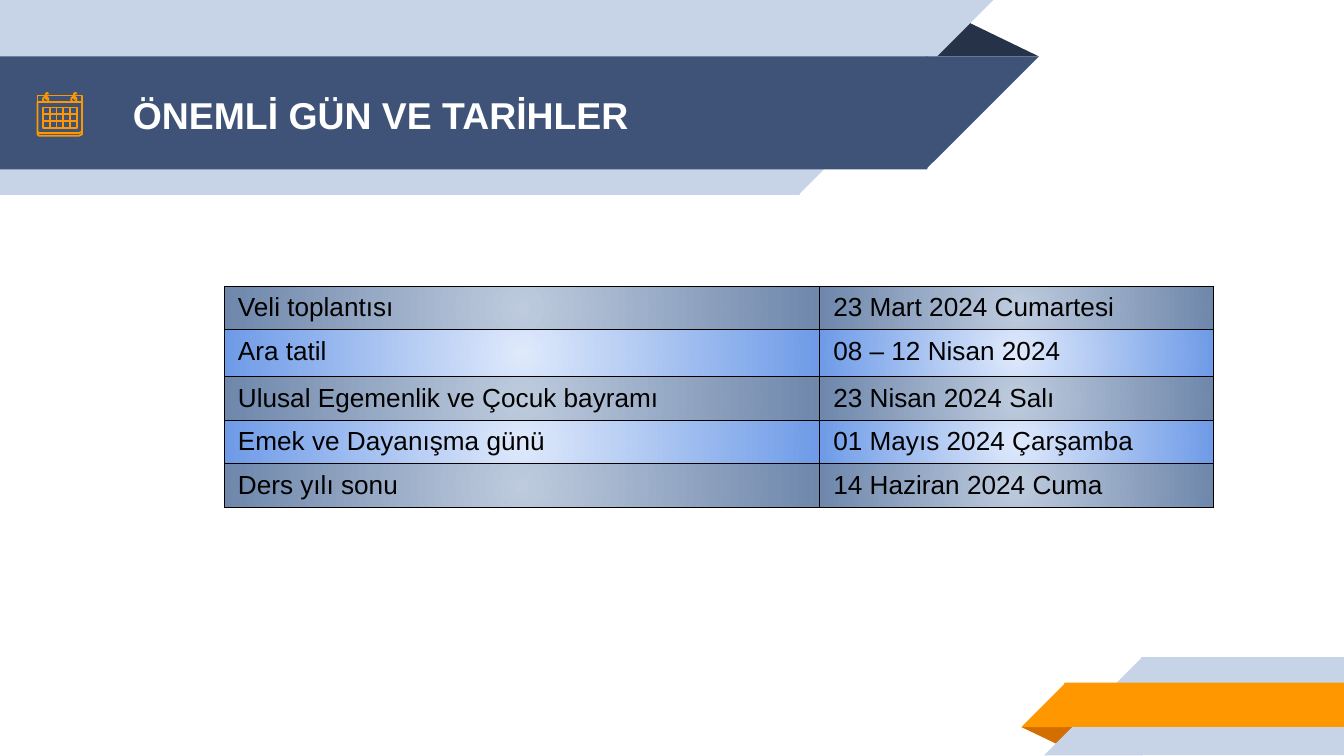
from lxml.etree import SubElement
from pptx import Presentation
from pptx.dml.color import RGBColor
from pptx.enum.shapes import MSO_CONNECTOR, MSO_SHAPE
from pptx.enum.text import MSO_ANCHOR
from pptx.oxml import parse_xml
from pptx.oxml.ns import qn
from pptx.util import Inches, Pt

NS = 'xmlns:a="http://schemas.openxmlformats.org/drawingml/2006/main"'
PALE, NAVY, DARK = "C7D3E6", "3F5378", "263248"
ORANGE, RUST = "FF9800", "D26F00"
GREY = ("BECBDE", "6E87AB")
BLUE = ("DFE9FB", "6E9BE7")
DATES = [
    ("Veli toplantısı", "23 Mart 2024 Cumartesi"),
    ("Ara tatil", "08 – 12 Nisan 2024"),
    ("Ulusal Egemenlik ve Çocuk bayramı", "23 Nisan 2024 Salı"),
    ("Emek ve Dayanışma günü", "01 Mayıs 2024 Çarşamba"),
    ("Ders yılı sonu", "14 Haziran 2024 Cuma"),
]


def color(code):
    return RGBColor.from_string(code)


def style(run, size, code, bold=False):
    form = {"name": "Arial", "size": Pt(size), "bold": bold}
    for key, value in form.items():
        setattr(run.font, key, value)
    run.font.color.rgb = color(code)


def add_solid(slide, kind, box, code, turn=0, flip=False):
    shape = slide.shapes.add_shape(kind, *map(Inches, box))
    shape.shadow.inherit = False
    shape.fill.solid()
    shape.fill.fore_color.rgb = color(code)
    shape.line.fill.background()
    shape.rotation = turn
    if flip:
        shape._element.spPr.xfrm.set("flipH", "1")
    return shape


def add_fold(slide, box, code, turn=0):
    fold = add_solid(slide, MSO_SHAPE.ISOSCELES_TRIANGLE, box, code, turn)
    fold.adjustments[0] = 0.32


def add_band(slide, left, top, width, height, code, right=False):
    """Draw a bar with a slanted end; a right bar slants at its left."""
    turn = 0 if right else 180
    tip = left - height if right else left + width
    lap = 0.01
    start = left - lap if right else left
    add_solid(slide, MSO_SHAPE.RECTANGLE, (start, top, width + lap, height),
              code, turn, True)
    add_solid(slide, MSO_SHAPE.RIGHT_TRIANGLE, (tip, top, height, height),
              code, turn, True)


def outline(shape):
    shape.line.color.rgb = color(ORANGE)
    shape.line.width = Pt(0.96)


def add_form(slide, points, close=False):
    spots = [(Inches(x), Inches(y)) for x, y in points]
    form = slide.shapes.build_freeform(*spots[0])
    form.add_line_segments(spots[1:], close=close)
    shape = form.convert_to_shape()
    shape.shadow.inherit = False
    shape.fill.background()
    outline(shape)


def add_ring(slide, left, top, size):
    ring = slide.shapes.add_shape(
        MSO_SHAPE.OVAL, *map(Inches, (left, top, size, size)))
    ring.shadow.inherit = False
    ring.fill.background()
    outline(ring)


def add_rule(slide, *ends):
    rule = slide.shapes.add_connector(
        MSO_CONNECTOR.STRAIGHT, *map(Inches, ends))
    outline(rule)
    SubElement(rule._element.spPr, qn("a:effectLst"))


def add_icon(slide):
    """Draw the calendar: header, rings, base, clips, page and day grid."""
    left, right = 0.28, 0.61
    add_form(slide, [(right, 0.76), (right, 0.71), (left, 0.71), (left, 0.76)])
    for x in (0.32, 0.53):
        add_ring(slide, x, 0.72, 0.04)
    add_form(slide, [(left, 0.98), (left, 1), (0.29, 1.01), (0.59, 1.01),
                     (right, 1), (right, 0.98)])
    for x in (0.55, 0.34):
        add_form(slide, [(x + 0.01, 0.74), (x, 0.73), (x, 0.7),
                         (x + 0.01, 0.69), (x + 0.02, 0.7)])
    add_form(slide, [(left, 0.76), (left, 0.98), (0.29, 0.99), (0.59, 0.99),
                     (right, 0.98), (right, 0.76)], True)
    x, y, w, h, step = 0.32, 0.8, 0.25, 0.15, 0.05
    add_form(slide, [(x, y), (x + w, y), (x + w, y + h), (x, y + h)], True)
    for i in (1, 2):
        add_rule(slide, x, y + i * step, x + w, y + i * step)
    for i in range(1, 5):
        add_rule(slide, x + i * step, y, x + i * step, y + h)


def add_title(slide, text):
    box = slide.shapes.add_textbox(*map(Inches, (0.89, 0.43, 5.75, 0.84)))
    frame = box.text_frame
    form = {"word_wrap": True, "vertical_anchor": MSO_ANCHOR.MIDDLE}
    for side in ("left", "right", "top", "bottom"):
        form["margin_" + side] = Inches(0.1)
    for key, value in form.items():
        setattr(frame, key, value)
    run = frame.paragraphs[0].add_run()
    run.text = text
    style(run, 20, "FFFFFF", True)


def paint(cell, inner, outer):
    """Give a cell black borders and a round gradient."""
    props = cell._tc.get_or_add_tcPr()
    for side in ("L", "R", "T", "B"):
        props.append(parse_xml(
            f'<a:ln{side} {NS} w="{Pt(0.75)}"><a:solidFill>'
            f'<a:srgbClr val="000000"/></a:solidFill></a:ln{side}>'))
    props.append(parse_xml(
        f'<a:gradFill {NS}><a:gsLst>'
        f'<a:gs pos="0"><a:srgbClr val="{inner}"/></a:gs>'
        f'<a:gs pos="100000"><a:srgbClr val="{outer}"/></a:gs></a:gsLst>'
        '<a:path path="circle"><a:fillToRect l="50000" t="50000" '
        'r="50000" b="50000"/></a:path></a:gradFill>'))


def add_dates(slide):
    table = slide.shapes.add_table(
        len(DATES), 2, *map(Inches, (1.67, 2.13, 7.36, 1.39))).table
    for col, width in zip(table.columns, (4.43, 2.93)):
        col.width = Inches(width)
    for r, texts in enumerate(DATES):
        table.rows[r].height = Inches(0.35 if r == 1 else 0.26)
        for c, text in enumerate(texts):
            cell = table.cell(r, c)
            cell.margin_bottom = Inches(0.04)
            run = cell.text_frame.paragraphs[0].add_run()
            run.text = text
            style(run, 14, "000000")
            paint(cell, *(BLUE if r % 2 else GREY))


def main():
    deck = Presentation()
    deck.slide_width = Inches(10)
    deck.slide_height = deck.slide_width * 9 // 16
    slide = deck.slides.add_slide(deck.slide_layouts[6])
    add_fold(slide, (6.88, 0.14, 0.85, 0.28), DARK)
    add_band(slide, 0, 0, 5.94, 1.45, PALE)
    add_band(slide, 0, 0.42, 6.89, 0.84, NAVY)
    add_fold(slide, (7.6, 5.41, 0.43, 0.14), RUST, 180)
    add_band(slide, 8.5, 4.89, 1.5, 0.73, PALE, True)
    add_band(slide, 7.93, 5.08, 2.07, 0.33, ORANGE, True)
    add_title(slide, "ÖNEMLİ GÜN VE TARİHLER")
    add_icon(slide)
    add_dates(slide)
    deck.save("out.pptx")


if __name__ == "__main__":
    main()
